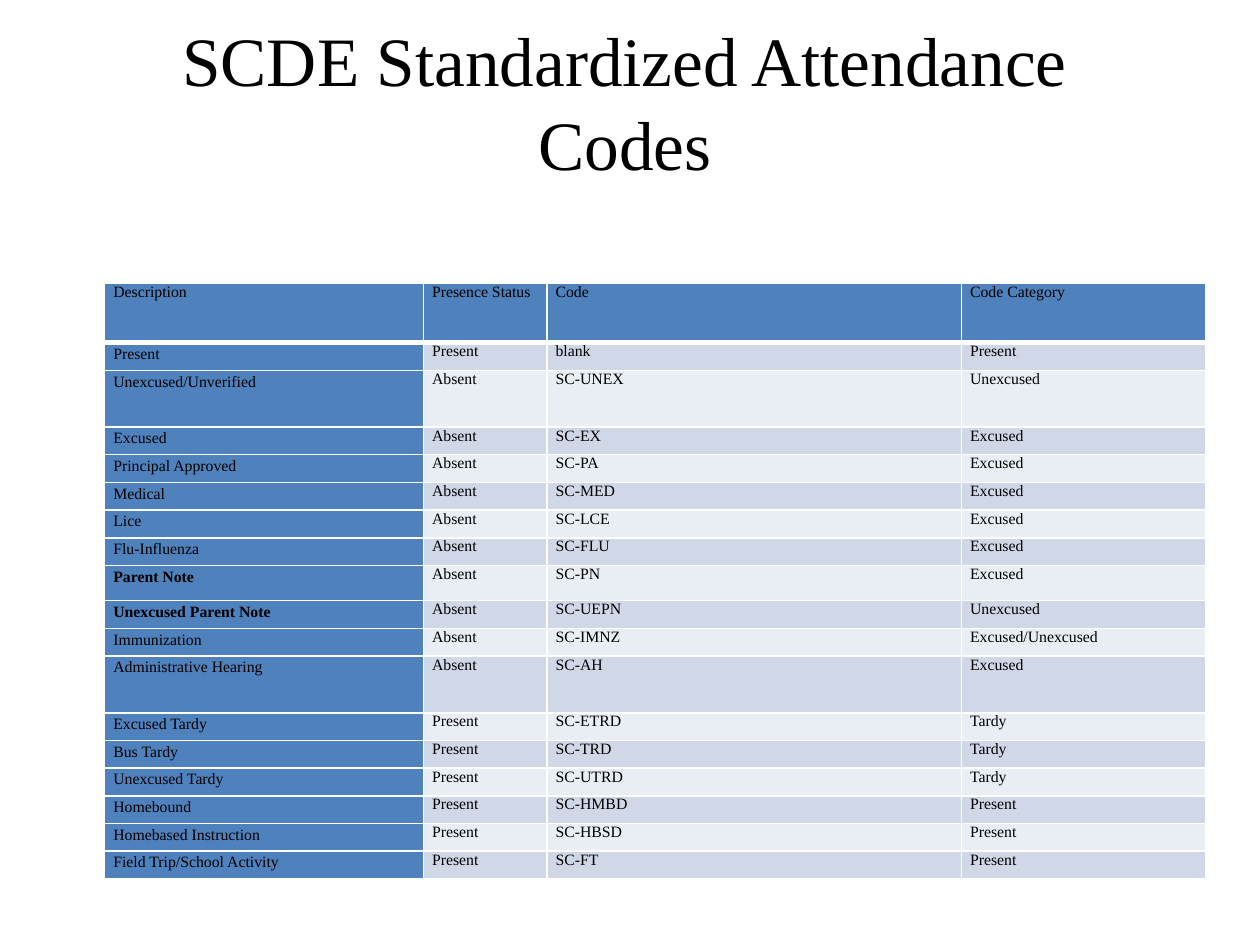
from dataclasses import dataclass

from lxml.etree import SubElement
from pptx import Presentation
from pptx.dml.color import RGBColor
from pptx.enum.text import MSO_ANCHOR, PP_ALIGN
from pptx.oxml.ns import qn
from pptx.util import Inches, Pt


@dataclass(frozen=True)
class Theme:
    font: str = "Times New Roman"
    ink: str = "000000"
    accent: str = "4F81BD"
    bands: tuple = ("D0D8E8", "E9EDF4")
    rule: str = "FFFFFF"
    rule_width: float = 1
    header_rule_width: float = 3
    title_size: float = 39.6
    table_size: float = 9
    description_spacing: float = 1.15


HEADINGS = ("Description", "Presence Status", "Code", "Code Category")
CODES = (
    ("Present", "Present", "blank", "Present"),
    ("Unexcused/Unverified", "Absent", "SC-UNEX", "Unexcused"),
    ("Excused", "Absent", "SC-EX", "Excused"),
    ("Principal Approved", "Absent", "SC-PA", "Excused"),
    ("Medical", "Absent", "SC-MED", "Excused"),
    ("Lice", "Absent", "SC-LCE", "Excused"),
    ("Flu-Influenza", "Absent", "SC-FLU", "Excused"),
    ("Parent Note", "Absent", "SC-PN", "Excused"),
    ("Unexcused Parent Note", "Absent", "SC-UEPN", "Unexcused"),
    ("Immunization", "Absent", "SC-IMNZ", "Excused/Unexcused"),
    ("Administrative Hearing", "Absent", "SC-AH", "Excused"),
    ("Excused Tardy", "Present", "SC-ETRD", "Tardy"),
    ("Bus Tardy", "Present", "SC-TRD", "Tardy"),
    ("Unexcused Tardy", "Present", "SC-UTRD", "Tardy"),
    ("Homebound", "Present", "SC-HMBD", "Present"),
    ("Homebased Instruction", "Present", "SC-HBSD", "Present"),
    ("Field Trip/School Activity", "Present", "SC-FT", "Present"),
)
BOLD_DESCRIPTIONS = {"Parent Note", "Unexcused Parent Note"}
COLUMN_WIDTHS = (2.53, 0.98, 3.29, 1.94)
ROW_HEIGHT = 0.22
TALL_ROWS = {
    "Description": 0.47,
    "Unexcused/Unverified": 0.45,
    "Parent Note": 0.28,
    "Administrative Hearing": 0.45,
}


class SlideBuilder:
    def __init__(self, slide, theme):
        self.slide = slide
        self.theme = theme

    def style_text(self, paragraph, size, bold=False):
        for run in paragraph.runs:
            run.font.name = self.theme.font
            run.font.size = Pt(size)
            run.font.bold = bold
            run.font.color.rgb = RGBColor.from_string(self.theme.ink)

    def title(self, wording, left, top, width, height):
        frame = self.slide.shapes.add_textbox(
            Inches(left), Inches(top), Inches(width), Inches(height)
        ).text_frame
        frame.word_wrap = True
        frame.vertical_anchor = MSO_ANCHOR.MIDDLE
        frame.text = wording
        heading = frame.paragraphs[0]
        heading.alignment = PP_ALIGN.CENTER
        self.style_text(heading, self.theme.title_size)

    def borders(self, cell, is_header):
        properties = cell._tc.get_or_add_tcPr()
        for side in ("L", "R", "T", "B"):
            thick = is_header and side == "B"
            width = self.theme.header_rule_width if thick else self.theme.rule_width
            line = SubElement(properties, qn(f"a:ln{side}"), w=str(Pt(width)))
            fill = SubElement(line, qn("a:solidFill"))
            SubElement(fill, qn("a:srgbClr"), val=self.theme.rule)

    def cell(self, cell, wording, row, column):
        is_header = row == 0
        is_description = column == 0 and not is_header
        cell.margin_left = cell.margin_right = Inches(0.07)
        cell.margin_top = cell.margin_bottom = 0
        self.borders(cell, is_header)
        if is_header or is_description:
            color = self.theme.accent
        else:
            color = self.theme.bands[(row - 1) % 2]
        cell.fill.solid()
        cell.fill.fore_color.rgb = RGBColor.from_string(color)
        cell.text_frame.text = wording
        paragraph = cell.text_frame.paragraphs[0]
        if is_description:
            paragraph.line_spacing = self.theme.description_spacing
        self.style_text(paragraph, self.theme.table_size, wording in BOLD_DESCRIPTIONS)

    def table(self, records, left, top):
        heights = [TALL_ROWS.get(record[0], ROW_HEIGHT) for record in records]
        table = self.slide.shapes.add_table(
            len(records), len(COLUMN_WIDTHS), Inches(left), Inches(top),
            Inches(sum(COLUMN_WIDTHS)), Inches(sum(heights)),
        ).table
        for column, width in zip(table.columns, COLUMN_WIDTHS):
            column.width = Inches(width)
        for row, (record, height) in enumerate(zip(records, heights)):
            table.rows[row].height = Inches(height)
            for column, wording in enumerate(record):
                self.cell(table.cell(row, column), wording, row, column)


def main():
    presentation = Presentation()
    presentation.slide_width = Inches(10)
    presentation.slide_height = Inches(7.5)
    slide = presentation.slides.add_slide(presentation.slide_layouts[6])
    builder = SlideBuilder(slide, Theme())
    builder.title("SCDE Standardized Attendance Codes", 0.92, 0.62, 8.08, 0.36)
    builder.table((HEADINGS, *CODES), 0.83, 2.25)
    presentation.save("out.pptx")


if __name__ == "__main__":
    main()
